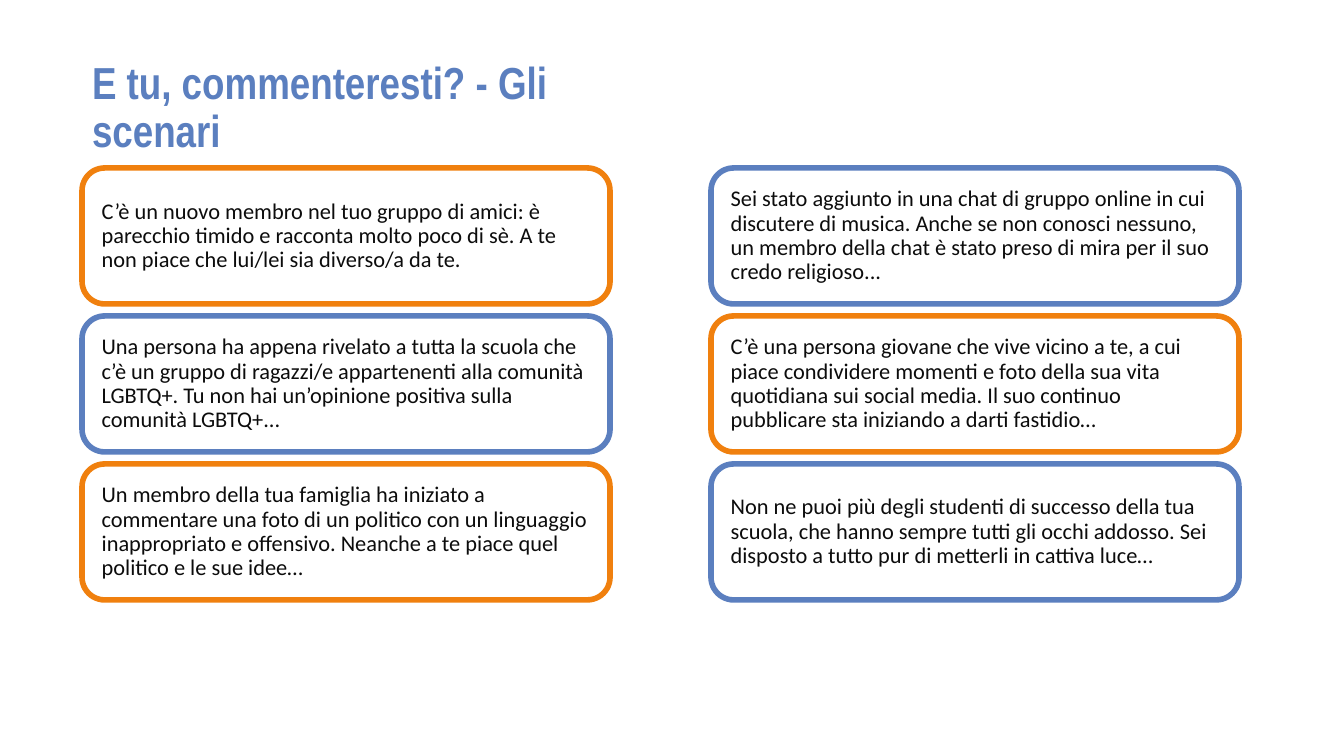
import pptx
import pptx.util
import pptx.dml.color
import pptx.enum.shapes
import pptx.enum.text

TITLE = "E tu, commenteresti? - Gli scenari"
SCENARIOS = [
    [
        "C’è un nuovo membro nel tuo gruppo di amici: è parecchio timido e racconta molto poco di sè. A te non piace che lui/lei sia diverso/a da te.",
        "Sei stato aggiunto in una chat di gruppo online in cui discutere di musica. Anche se non conosci nessuno, un membro della chat è stato preso di mira per il suo credo religioso...",
    ],
    [
        "Una persona ha appena rivelato a tutta la scuola che c’è un gruppo di ragazzi/e appartenenti alla comunità LGBTQ+. Tu non hai un’opinione positiva sulla comunità LGBTQ+...",
        "C’è una persona giovane che vive vicino a te, a cui piace condividere momenti e foto della sua vita quotidiana sui social media. Il suo continuo pubblicare sta iniziando a darti fastidio…",
    ],
    [
        "Un membro della tua famiglia ha iniziato a commentare una foto di un politico con un linguaggio inappropriato e offensivo. Neanche a te piace quel politico e le sue idee…",
        "Non ne puoi più degli studenti di successo della tua scuola, che hanno sempre tutti gli occhi addosso. Sei disposto a tutto pur di metterli in cattiva luce…",
    ],
]
COLORS = {"blue": "5B7FBF", "orange": "F0800E", "ink": "0C0C0C"}
BORDERS = ["orange", "blue"]

PX_PER_INCH = 134.4
LEFT, TOP = 82, 168
CARD_WIDTH, CARD_HEIGHT = 528, 136
COLUMN_STEP, ROW_STEP = 629, 148


def px(length):
    return pptx.util.Inches(length / PX_PER_INCH)


def color(name):
    return pptx.dml.color.RGBColor.from_string(COLORS[name])


def write(shape, text, *, font, size, ink, bold=False, inset_x=13, inset_y=13):
    frame = shape.text_frame
    frame.word_wrap = True
    frame.auto_size = pptx.enum.text.MSO_AUTO_SIZE.NONE
    frame.vertical_anchor = pptx.enum.text.MSO_ANCHOR.MIDDLE
    frame.margin_left = frame.margin_right = px(inset_x)
    frame.margin_top = frame.margin_bottom = px(inset_y)
    paragraph = frame.paragraphs[0]
    paragraph.alignment = pptx.enum.text.PP_ALIGN.LEFT
    paragraph.line_spacing = 0.9
    paragraph.space_before = pptx.util.Pt(0)
    run = paragraph.add_run()
    run.text = text
    run.font.name = font
    run.font.size = pptx.util.Pt(size)
    run.font.bold = bold
    run.font.color.rgb = color(ink)


def add_card(slide, scenario, row, column):
    card = slide.shapes.add_shape(
        pptx.enum.shapes.MSO_SHAPE.ROUNDED_RECTANGLE,
        px(LEFT + column * COLUMN_STEP), px(TOP + row * ROW_STEP),
        px(CARD_WIDTH), px(CARD_HEIGHT),
    )
    card.shadow.inherit = False
    card.fill.background()
    card.line.color.rgb = color(BORDERS[(row + column) % 2])
    card.line.width = pptx.util.Pt(3)
    write(card, scenario, font="Calibri", size=12, ink="ink")


def main():
    deck = pptx.Presentation()
    deck.slide_width, deck.slide_height = px(1344), px(756)
    slide = deck.slides.add_slide(deck.slide_layouts[5])

    title = slide.shapes.title
    title.left, title.top = px(LEFT), px(50)
    title.width, title.height = px(590), px(118)
    write(title, TITLE, font="Arial Narrow", size=24, ink="blue", bold=True,
          inset_x=10, inset_y=5)

    for row, scenarios in enumerate(SCENARIOS):
        for column, scenario in enumerate(scenarios):
            add_card(slide, scenario, row, column)

    deck.save("out.pptx")


if __name__ == "__main__":
    main()
